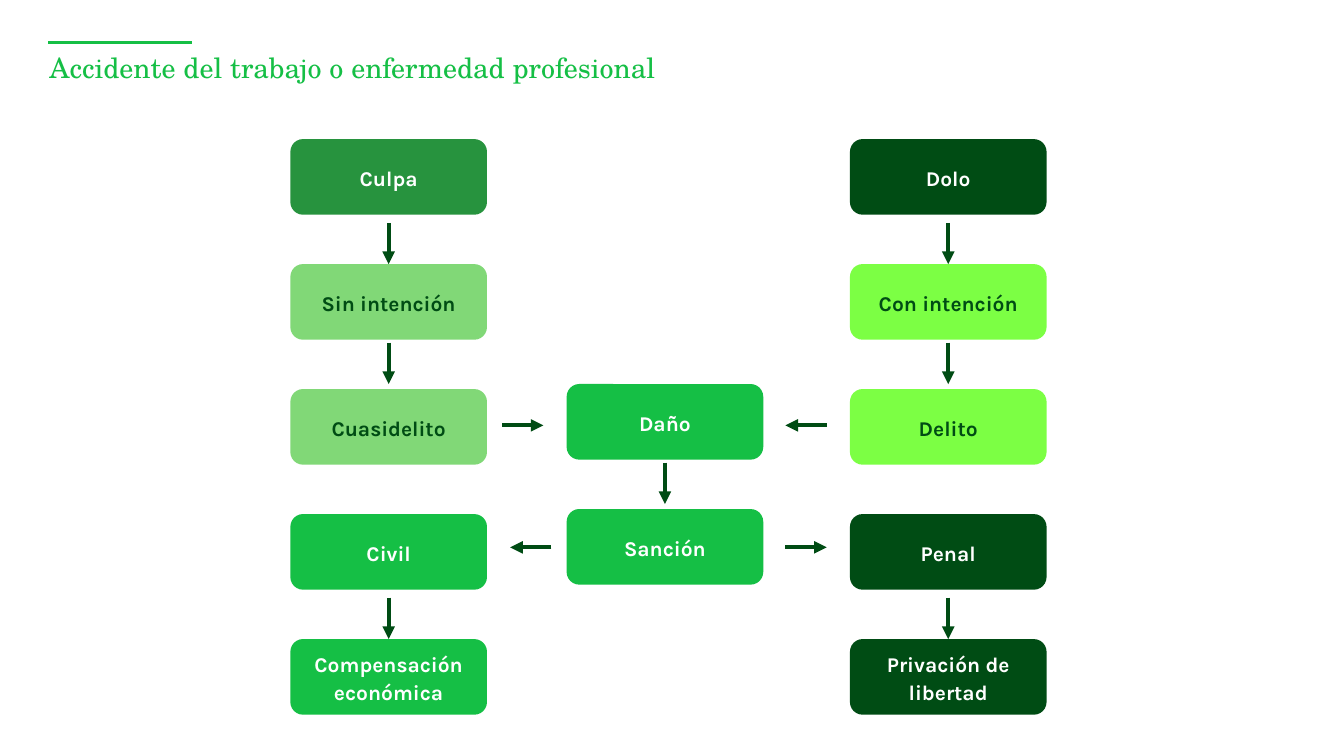
from lxml import etree
from pptx import Presentation
from pptx import util as u
from pptx.dml.color import RGBColor
from pptx.enum import shapes, text
from pptx.oxml import ns

GREEN = RGBColor(0x15, 0xBF, 0x45)
DARK = RGBColor(0x00, 0x4C, 0x14)
MEDIUM = RGBColor(0x27, 0x93, 0x3E)
PALE = RGBColor(0x81, 0xD8, 0x77)
LIME = RGBColor(0x7C, 0xFF, 0x44)
WHITE = RGBColor(0xFF, 0xFF, 0xFF)

HEADING = "Accidente del trabajo o enfermedad profesional"
STEPS = [
    ("Culpa", "left", 0, MEDIUM, WHITE),
    ("Sin intención", "left", 1, PALE, DARK),
    ("Cuasidelito", "left", 2, PALE, DARK),
    ("Civil", "left", 3, GREEN, WHITE),
    ("Compensación económica", "left", 4, GREEN, WHITE),
    ("Daño", "centre", 2, GREEN, WHITE),
    ("Sanción", "centre", 3, GREEN, WHITE),
    ("Dolo", "right", 0, DARK, WHITE),
    ("Con intención", "right", 1, LIME, DARK),
    ("Delito", "right", 2, LIME, DARK),
    ("Penal", "right", 3, DARK, WHITE),
    ("Privación de libertad", "right", 4, DARK, WHITE),
]
COLUMNS = {"left": (2.88, 0), "centre": (5.62, -0.05), "right": (8.43, 0)}
STEP_WIDTH, STEP_HEIGHT = 1.95, 0.75
FIRST_ROW, ROW_PITCH = 1.38, 1.24
ARROW_LENGTH = 0.41

DOWN_ARROWS = [
    ("left", 2.21, "Sin intención"),
    ("left", 3.4, None),
    ("left", 5.93, "Compensación económica"),
    ("right", 2.21, "Con intención"),
    ("right", 3.4, None),
    ("right", 5.93, "Privación de libertad"),
    ("centre", 4.59, None),
]
SIDE_ARROWS = [(4.98, 4.22, 1), (8.2, 4.22, -1), (5.47, 5.43, -1), (7.79, 5.43, 1)]


def add_line(slide, start, end, color, width):
    line = slide.shapes.add_connector(
        shapes.MSO_CONNECTOR.STRAIGHT, *(u.Inches(v) for v in start + end))
    line.line.color.rgb = color
    line.line.width = u.Pt(width)
    etree.SubElement(line._element.spPr, ns.qn("a:effectLst"))
    return line


def add_arrow(slide, start, end):
    arrow = add_line(slide, start, end, DARK, 3)
    etree.SubElement(arrow.line._get_or_add_ln(), ns.qn("a:tailEnd"), type="triangle")
    return arrow


def write(paragraph, words, font_name, size, color, bold):
    run = paragraph.add_run()
    run.text = words
    run.font.name = font_name
    run.font.size = u.Pt(size)
    run.font.color.rgb = color
    run.font.bold = bold


def set_frame(frame, inset, anchor):
    frame.word_wrap = True
    frame.auto_size = text.MSO_AUTO_SIZE.NONE
    frame.vertical_anchor = anchor
    frame.margin_left = frame.margin_right = u.Inches(inset)
    frame.margin_top = frame.margin_bottom = u.Inches(inset)


def add_heading(slide):
    heading = slide.shapes.title
    heading.left, heading.top = u.Inches(0.49), u.Inches(0.54)
    heading.width, heading.height = u.Inches(10.79), u.Inches(0.57)
    set_frame(heading.text_frame, 0, text.MSO_ANCHOR.TOP)
    paragraph = heading.text_frame.paragraphs[0]
    paragraph.alignment = text.PP_ALIGN.LEFT
    paragraph.line_spacing = 0.9
    paragraph.space_before = u.Pt(0)
    write(paragraph, HEADING, "TeX Gyre Schola", 20, GREEN, False)


def add_step(slide, label, column, row, fill, color):
    left, shift = COLUMNS[column]
    step = slide.shapes.add_shape(
        shapes.MSO_SHAPE.ROUNDED_RECTANGLE,
        u.Inches(left), u.Inches(FIRST_ROW + row * ROW_PITCH + shift),
        u.Inches(STEP_WIDTH), u.Inches(STEP_HEIGHT))
    step.shadow.inherit = False
    step.fill.solid()
    step.fill.fore_color.rgb = fill
    step.line.fill.background()
    set_frame(step.text_frame, 0.12, text.MSO_ANCHOR.MIDDLE)
    paragraph = step.text_frame.paragraphs[0]
    paragraph.alignment = text.PP_ALIGN.CENTER
    paragraph.line_spacing = u.Pt(20)
    write(paragraph, label, "Karla", 15, color, True)
    return step


def main():
    deck = Presentation()
    deck.slide_width, deck.slide_height = u.Inches(13.33), u.Inches(7.5)
    slide = deck.slides.add_slide(deck.slide_layouts[5])
    add_line(slide, (0.48, 0.42), (1.9, 0.42), GREEN, 1.75)
    add_heading(slide)
    steps = {label: add_step(slide, label, *rest) for label, *rest in STEPS}
    for column, top, target in DOWN_ARROWS:
        middle = COLUMNS[column][0] + STEP_WIDTH / 2
        arrow = add_arrow(slide, (middle, top), (middle, top + ARROW_LENGTH))
        if target:
            arrow.end_connect(steps[target], 0)
    for start, level, direction in SIDE_ARROWS:
        add_arrow(slide, (start, level), (start + direction * ARROW_LENGTH, level))
    deck.save("out.pptx")


if __name__ == "__main__":
    main()
